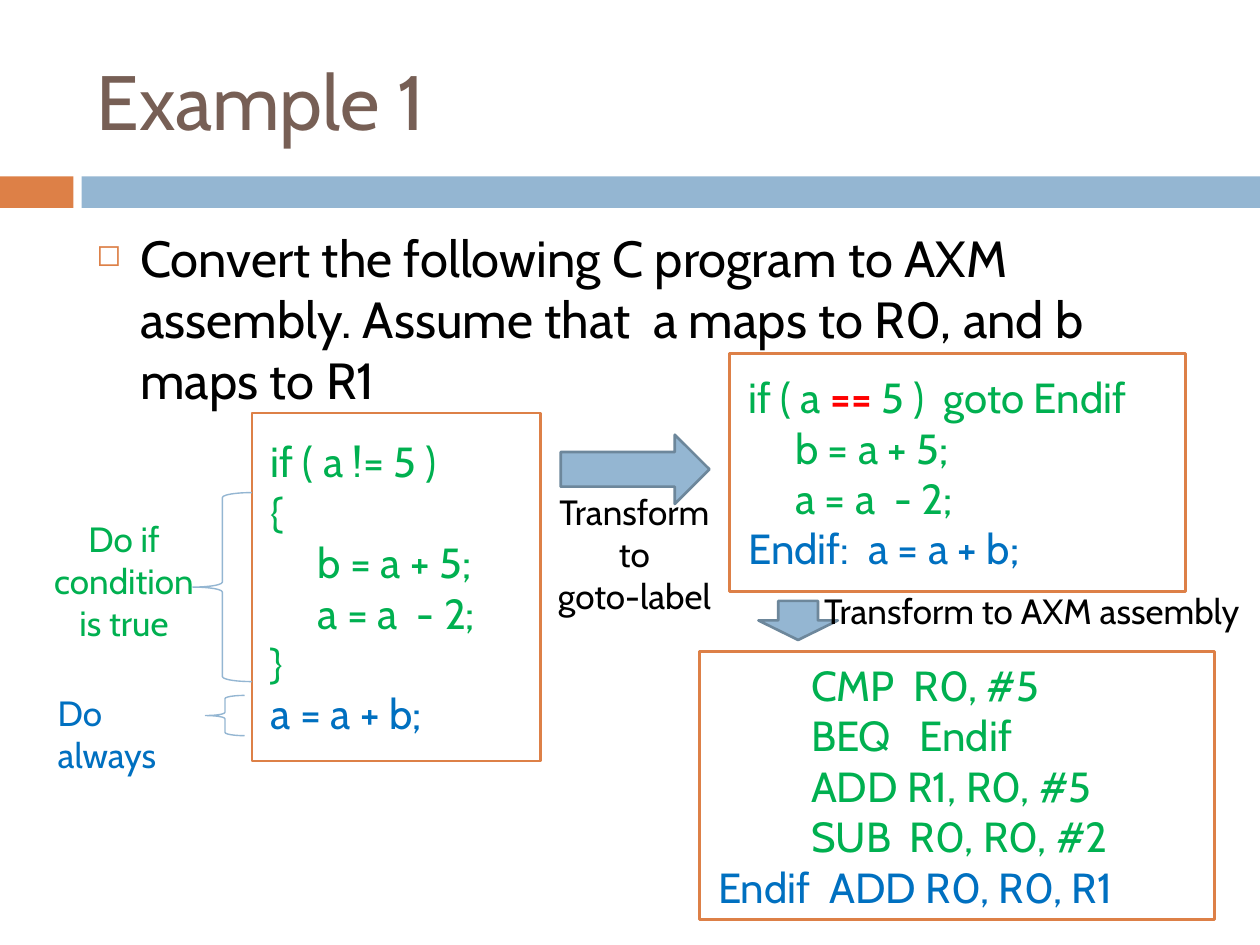
"""Build a slide that turns a C if statement into AXM assembly in two steps."""
from lxml import etree
from pptx import Presentation
from pptx.dml.color import RGBColor
from pptx.enum.shapes import MSO_SHAPE
from pptx.enum.text import MSO_ANCHOR, MSO_AUTO_SIZE, PP_ALIGN
from pptx.oxml.ns import qn
from pptx.util import Pt

RECTANGLE = MSO_SHAPE.RECTANGLE
BRACE = MSO_SHAPE.LEFT_BRACE
RIGHT_ARROW = MSO_SHAPE.RIGHT_ARROW
DOWN_ARROW = MSO_SHAPE.DOWN_ARROW
MIDDLE, TOP = MSO_ANCHOR.MIDDLE, MSO_ANCHOR.TOP
LEFT, CENTER = PP_ALIGN.LEFT, PP_ALIGN.CENTER
NO_FIT = MSO_AUTO_SIZE.NONE

FONT = "Cabin"
COLORS = {
    "orange": "DD8047", "blue": "94B6D2", "arrow edge": "6D879B",
    "title": "775F55", "black": "000000", "white": "FFFFFF",
    "green": "00B050", "always": "0070C0", "red": "FF0000",
}


def add_figure(kind, place, fill=None, edge=None, width=1.5):
    figure = page.shapes.add_shape(kind, *[Pt(value) for value in place])
    figure.shadow.inherit = False
    if fill:
        figure.fill.solid()
        figure.fill.fore_color.rgb = RGBColor.from_string(COLORS[fill])
    else:
        figure.fill.background()
    if edge:
        figure.line.color.rgb = RGBColor.from_string(COLORS[edge])
        figure.line.width = Pt(width)
    else:
        figure.line.fill.background()
    return figure


def write_lines(frame, lines, size, align=LEFT, anchor=TOP):
    frame.word_wrap = True
    frame.auto_size = NO_FIT
    frame.vertical_anchor = anchor
    for number, (text, color, indent) in enumerate(lines):
        para = frame.add_paragraph() if number else frame.paragraphs[0]
        para.text = text
        para.alignment = align
        para.font.name = FONT
        para.font.size = Pt(size)
        para.font.color.rgb = RGBColor.from_string(COLORS[color])
        if indent:
            para._p.get_or_add_pPr().set("marL", str(Pt(indent)))


deck = Presentation()
deck.slide_width, deck.slide_height = Pt(720), Pt(540)
page = deck.slides.add_slide(deck.slide_layouts[5])

add_figure(RECTANGLE, (0, 100.8, 42, 18), "orange")
add_figure(RECTANGLE, (46.6, 100.8, 673.4, 18), "blue")

title = page.shapes.title
title.left, title.top, title.width, title.height = Pt(48), Pt(18), Pt(642), Pt(78)
write_lines(title.text_frame, [("Example 1", "title", 0)], 44, LEFT, MIDDLE)

task = page.shapes.add_textbox(Pt(48), Pt(126), Pt(642), Pt(354))
task_text = ("Convert the following C program to AXM assembly. "
             "Assume that  a maps to R0, and b maps to R1")
write_lines(task.text_frame, [(task_text, "black", 25.2)], 29)
para = task.text_frame.paragraphs[0]
para.space_before = Pt(7)
properties = para._p.get_or_add_pPr()
properties.set("indent", str(-Pt(25.2)))
bullet_color = etree.SubElement(properties, qn("a:buClr"))
etree.SubElement(bullet_color, qn("a:srgbClr"), val=COLORS["orange"])
etree.SubElement(properties, qn("a:buSzPct"), val="60000")
etree.SubElement(properties, qn("a:buChar"), char="◻")

BASE, BODY, MNEMONIC = 3.6, 30.4, 56.8
code_boxes = [
    ((144, 236, 165, 198.8), [
        ("if ( a != 5 )", "green", BASE),
        ("{", "green", BASE),
        ("b = a + 5;", "green", BODY),
        ("a = a  - 2;", "green", BODY),
        ("}", "green", BASE),
        ("a = a + b;", "always", BASE),
    ]),
    ((416.9, 202, 260.6, 136), [
        ("", "green", BASE),
        ("b = a + 5;", "green", BODY),
        ("a = a  - 2;", "green", BODY),
        ("Endif:  a = a + b;", "always", BASE),
    ]),
    ((399.6, 372.2, 294.5, 153.2), [
        ("CMP  R0, #5", "green", MNEMONIC),
        ("BEQ   Endif", "green", MNEMONIC),
        ("ADD R1, R0, #5", "green", MNEMONIC),
        ("SUB  R0, R0, #2", "green", MNEMONIC),
        ("Endif  ADD R0, R0, R1", "always", BASE),
    ]),
]
code_frames = []
for place, lines in code_boxes:
    box = add_figure(RECTANGLE, place, "white", "orange")
    write_lines(box.text_frame, lines, 24, LEFT, MIDDLE)
    code_frames.append(box.text_frame)

condition = code_frames[1].paragraphs[0]
for text, color in [("if ( a ", "green"), ("==", "red"), (" 5 )  goto Endif", "green")]:
    span = condition.add_run()
    span.text = text
    span.font.name = FONT
    span.font.size = Pt(24)
    span.font.bold = color == "red"
    span.font.color.rgb = RGBColor.from_string(COLORS[color])

for place in [(110.2, 281.5, 33.8, 108), (117.4, 397.4, 22.3, 23)]:
    add_figure(BRACE, place, edge="blue", width=0.79)

add_figure(RIGHT_ARROW, (320.4, 248.4, 85, 39.6), "blue", "arrow edge")
add_figure(DOWN_ARROW, (433.4, 343.4, 45.4, 22.3), "blue", "arrow edge")

labels = [
    ((2.9, 292.3, 136, 55.4), ["Do if condition", "is true"], "green", CENTER),
    ((25.9, 391.7, 97.9, 31.7), ["Do always"], "always", LEFT),
    ((303.1, 276.5, 118.8, 55.4), ["Transform to", "goto-label"], "black", CENTER),
    ((462.2, 333.4, 254.9, 31.7), ["Transform to AXM assembly"], "black", CENTER),
]
for place, texts, color, align in labels:
    label = page.shapes.add_textbox(*[Pt(value) for value in place])
    write_lines(label.text_frame, [(text, color, 0) for text in texts], 20, align)

deck.save("out.pptx")
